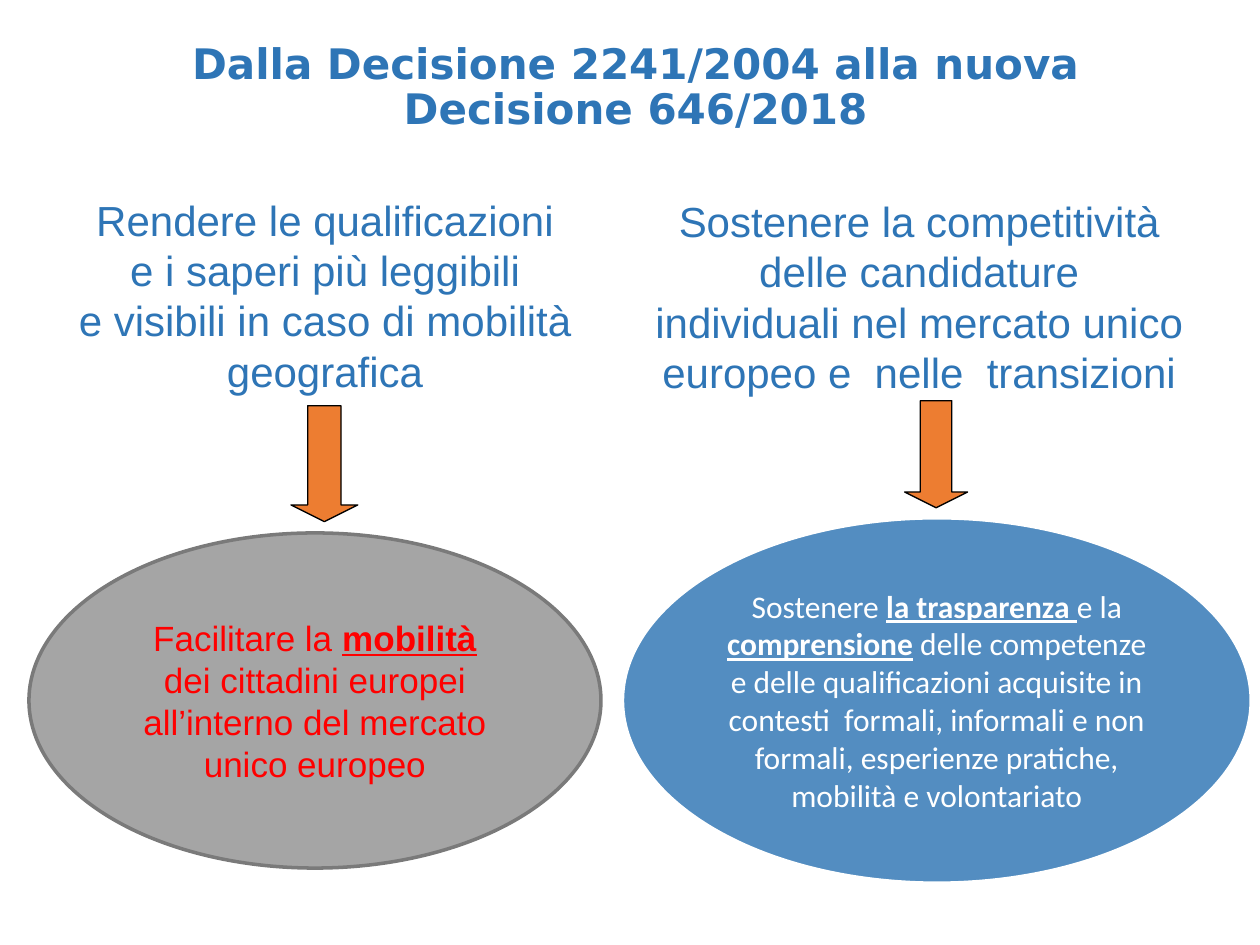
import pptx
import pptx.util
from pptx.dml.color import RGBColor
from pptx.enum.shapes import MSO_SHAPE
from pptx.enum.text import MSO_ANCHOR, PP_ALIGN
from pptx.util import Inches, Pt

BLUE, ORANGE, BLACK, WHITE, RED = "2E75B6", "ED7D31", "000000", "FFFFFF", "FF0000"

TITLE = "Dalla Decisione 2241/2004 alla nuova Decisione 646/2018"

# Paragraphs are lists of (text, emphasised) runs.
AIMS = [
    ((0.38, 1.44, 4.4, 1.81), 0.1, [
        [("Rendere le qualificazioni", False)],
        [("e i saperi più leggibili", False)],
        [("e visibili in caso di mobilità geografica", False)],
    ]),
    ((5, 1.5, 4.59, 1.72), 0.05, [
        [("Sostenere la competitività", False)],
        [("delle candidature", False)],
        [("individuali nel mercato unico europeo e  nelle  transizioni", False)],
    ]),
]
ARROWS = [(2.31, 3.22, 0.53, 0.92), (7.18, 3.18, 0.5, 0.85)]
ELLIPSES = [
    ((0.23, 4.23, 4.54, 2.66), "A5A5A5", "7A7A7A"),
    ((4.94, 4.11, 4.99, 2.9), "538DC1", WHITE),
]
MOBILITY = [[
    ("Facilitare la ", False),
    ("mobilità ", True),
    ("dei cittadini europei all’interno del mercato unico europeo", False),
]]
TRANSPARENCY_BOX = (5.67, 4.53, 3.53, 2.05)
TRANSPARENCY = [[
    ("Sostenere ", False),
    ("la trasparenza ", True),
    ("e la ", False),
    ("comprensione", True),
    (" delle competenze e delle qualificazioni acquisite in contesti  formali, "
     "informali e non formali, esperienze pratiche, mobilità e volontariato", False),
]]


def color(value):
    return RGBColor.from_string(value)


def set_margins(frame, horizontal, vertical):
    frame.margin_left = frame.margin_right = Inches(horizontal)
    frame.margin_top = frame.margin_bottom = Inches(vertical)


def write(frame, paragraphs, font_name, size, text_color):
    frame.word_wrap = True
    for index, runs in enumerate(paragraphs):
        paragraph = frame.paragraphs[0] if index == 0 else frame.add_paragraph()
        paragraph.alignment = PP_ALIGN.CENTER
        paragraph.font.name = font_name
        paragraph.font.size = Pt(size)
        paragraph.font.color.rgb = color(text_color)
        for text, emphasised in runs:
            run = paragraph.add_run()
            run.text = text
            if emphasised:
                run.font.bold = run.font.underline = True


def add_shape(slide, kind, box, fill, line, width):
    shape = slide.shapes.add_shape(kind, *map(Inches, box))
    shape.shadow.inherit = False
    shape.fill.solid()
    shape.fill.fore_color.rgb = color(fill)
    shape.line.color.rgb = color(line)
    shape.line.width = Pt(width)
    return shape


def add_text(slide, box):
    return slide.shapes.add_textbox(*map(Inches, box)).text_frame


def main():
    presentation = pptx.Presentation()
    presentation.slide_width, presentation.slide_height = Inches(10), Inches(7.5)
    slide = presentation.slides.add_slide(presentation.slide_layouts[5])

    title = slide.shapes.title
    title.left, title.top, title.width, title.height = map(Inches, (1.25, 0.25, 7.59, 0.91))
    set_margins(title.text_frame, 0.1, 0.1)
    title.text_frame.vertical_anchor = MSO_ANCHOR.BOTTOM
    write(title.text_frame, [[(TITLE, False)]], "DejaVu Sans", 24, BLUE)
    heading = title.text_frame.paragraphs[0]
    heading.font.bold = True
    heading.line_spacing = 0.9

    for box, vertical_margin, paragraphs in AIMS:
        frame = add_text(slide, box)
        set_margins(frame, 0.1, vertical_margin)
        write(frame, paragraphs, "Arial", 24, BLUE)

    for box in ARROWS:
        arrow = add_shape(slide, MSO_SHAPE.DOWN_ARROW, box, ORANGE, BLACK, 0.75)
        arrow.adjustments[0], arrow.adjustments[1] = 0.5, 0.25

    mobility, _ = [add_shape(slide, MSO_SHAPE.OVAL, box, fill, line, 2)
                   for box, fill, line in ELLIPSES]
    mobility.text_frame.vertical_anchor = MSO_ANCHOR.MIDDLE
    write(mobility.text_frame, MOBILITY, "Arial", 20, RED)

    frame = add_text(slide, TRANSPARENCY_BOX)
    set_margins(frame, 0.03, 0.03)
    frame.vertical_anchor = MSO_ANCHOR.MIDDLE
    write(frame, TRANSPARENCY, "Calibri", 18, WHITE)

    presentation.save("out.pptx")


if __name__ == "__main__":
    main()
